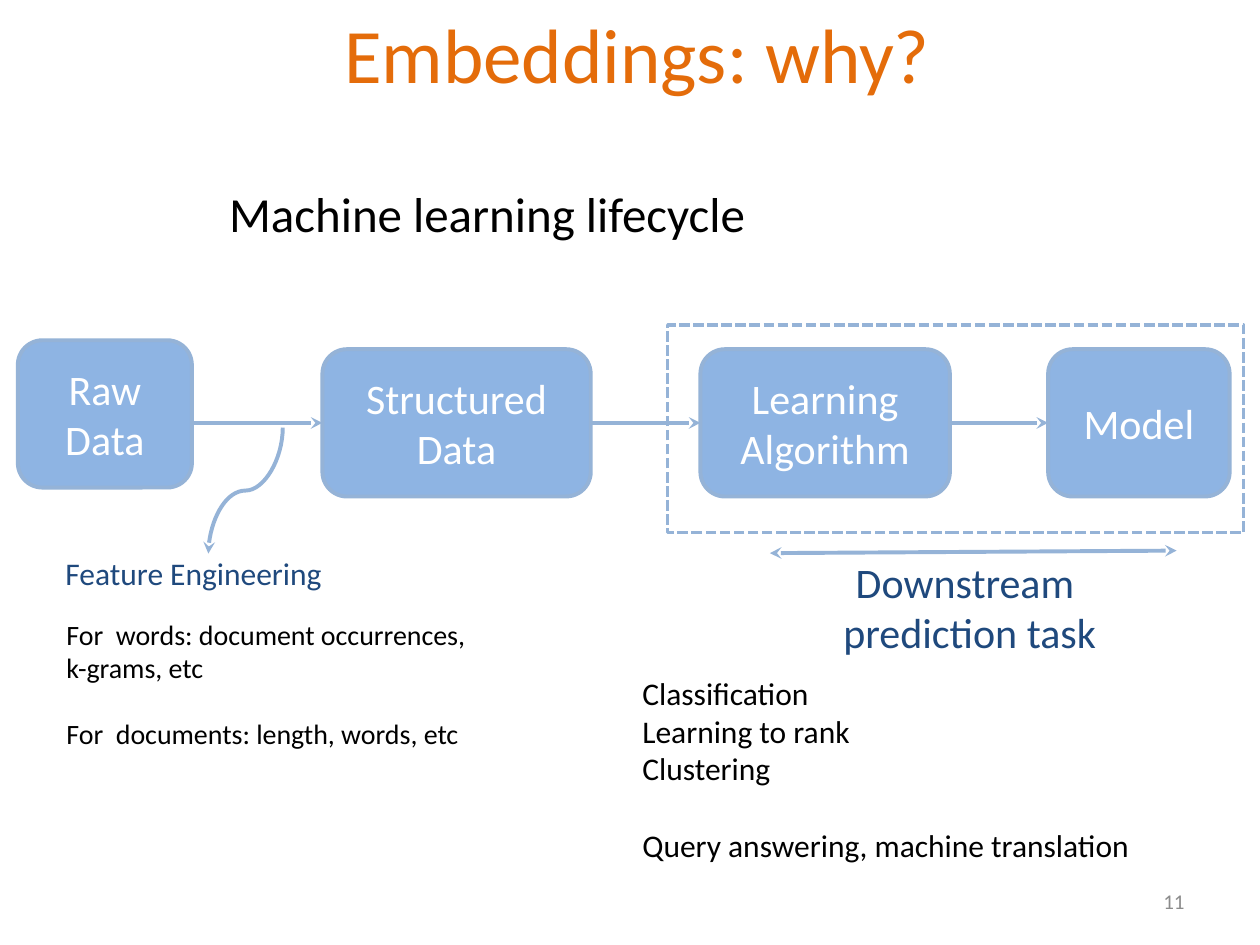
from lxml.etree import SubElement
from pptx import Presentation
from pptx.dml.color import RGBColor
from pptx.enum.dml import MSO_LINE as Dash
from pptx.enum.shapes import MSO_CONNECTOR as Link, MSO_SHAPE as Shape
from pptx.enum.text import MSO_ANCHOR as Anchor, PP_ALIGN as Align
from pptx.oxml.ns import qn
from pptx.util import Cm, Pt

ORANGE = RGBColor(0xE4, 0x6C, 0x0A)
FILL = RGBColor(0x8E, 0xB4, 0xE3)
EDGE = RGBColor(0x95, 0xB3, 0xD7)
NAVY = RGBColor(0x1F, 0x49, 0x7D)
BLACK = RGBColor(0, 0, 0)
WHITE = RGBColor(255, 255, 255)
GRAY = RGBColor(0x8C, 0x8C, 0x8C)

TOP, HIGH = 7.04, 2.97
MID = TOP + HIGH / 2


def style(frame, text, size, color, align=Align.LEFT, anchor=Anchor.TOP):
    frame.text = text
    frame.word_wrap = True
    frame.vertical_anchor = anchor
    for para in frame.paragraphs:
        para.alignment = align
        for run in para.runs:
            run.font.name = "Calibri"
            run.font.size = Pt(size)
            run.font.color.rgb = color


def pad(frame):
    frame.margin_top = frame.margin_bottom = Cm(0.25)


def add_text(slide, area, text, size, color=BLACK, **kw):
    frame = slide.shapes.add_textbox(*map(Cm, area)).text_frame
    style(frame, text, size, color, **kw)
    return frame


def add_box(slide, text, left, width, top=TOP):
    box = slide.shapes.add_shape(
        Shape.ROUNDED_RECTANGLE, Cm(left), Cm(top), Cm(width), Cm(HIGH))
    box.shadow.inherit = False
    box.fill.solid()
    box.fill.fore_color.rgb = FILL
    box.line.color.rgb = EDGE
    box.line.width = Pt(2.25)
    style(box.text_frame, text, 24, WHITE, Align.CENTER, Anchor.MIDDLE)
    pad(box.text_frame)
    return box


def add_arrow(slide, ends, kind=Link.STRAIGHT, heads=("tailEnd",)):
    arrow = slide.shapes.add_connector(kind, *map(Cm, ends))
    arrow.line.color.rgb = EDGE
    arrow.line.width = Pt(2.25)
    for head in heads:
        SubElement(arrow.line._get_or_add_ln(), qn("a:" + head), type="stealth")
    SubElement(arrow._element.spPr, qn("a:effectLst"))
    return arrow


def add_frame(slide, area):
    frame = slide.shapes.add_shape(Shape.RECTANGLE, *map(Cm, area))
    frame.shadow.inherit = False
    frame.fill.background()
    frame.line.color.rgb = EDGE
    frame.line.width = Pt(2)
    frame.line.dash_style = Dash.SQUARE_DOT


def add_flow(slide):
    # Boxes of the lifecycle
    raw = add_box(slide, "Raw Data", 0.36, 3.51, top=6.86)
    data = add_box(slide, "Structured Data", 6.5, 5.41)
    learn = add_box(slide, "Learning Algorithm", 14.12, 5.03)
    model = add_box(slide, "Model", 21.13, 3.66)

    # Arrows; the first one starts below the middle of the raw data box
    first = add_arrow(slide, (3.91, MID, 6.5, MID))
    first.end_connect(data, 1)
    for left, right in ((data, learn), (learn, model)):
        arrow = add_arrow(slide, (0, MID, 1, MID))
        arrow.begin_connect(left, 3)
        arrow.end_connect(right, 1)

    # Curve down to feature engineering, turned a quarter clockwise
    curve = add_arrow(slide, (3.68, 9.14, 6.22, 10.64), Link.CURVE)
    curve._element.spPr.find(qn("a:xfrm")).set("rot", "5400000")

    # Downstream part
    add_frame(slide, (13.46, 6.55, 11.61, 4.19))
    add_arrow(slide, (15.52, 11.15, 23.72, 11.1), heads=("headEnd", "tailEnd"))


def add_notes(slide):
    # Captions
    add_text(slide, (4.37, 3.58, 16.89, 1.45), "Machine learning lifecycle", 28)
    pad(add_text(slide, (15.04, 10.97, 9.02, 2.97),
                 "Downstream \vprediction task", 24, NAVY, align=Align.CENTER))
    pad(add_text(slide, (0.03, 10.92, 7.75, 2.62),
                 "Feature Engineering", 18, NAVY, align=Align.CENTER))

    # Examples of features
    add_text(slide, (1.09, 12.32, 8.79, 1.63),
             "For  words: document occurrences, k-grams, etc", 16)
    add_text(slide, (1.09, 14.33, 9.27, 0.94),
             "For  documents: length, words, etc", 16)

    # Examples of tasks
    tasks = ("Classification", "Learning to rank", "Clustering",
             "Query answering, machine translation")
    frame = add_text(slide, (12.7, 13.46, 11.61, 4.11), "\n".join(tasks), 18)
    frame.paragraphs[-1].space_before = Pt(22)

    # Page number
    add_text(slide, (18.21, 17.65, 5.92, 1.02), "11", 12, GRAY,
             align=Align.RIGHT, anchor=Anchor.MIDDLE)


def main():
    deck = Presentation()
    deck.slide_width, deck.slide_height = Cm(25.4), Cm(19.05)
    slide = deck.slides.add_slide(deck.slide_layouts[5])

    title = slide.shapes.title
    title.left, title.top = Cm(1.42), Cm(0)
    title.width, title.height = Cm(22.86), Cm(3.18)
    style(title.text_frame, "Embeddings: why?", 44, ORANGE, Align.CENTER)

    add_flow(slide)
    add_notes(slide)
    deck.save("out.pptx")


if __name__ == "__main__":
    main()
